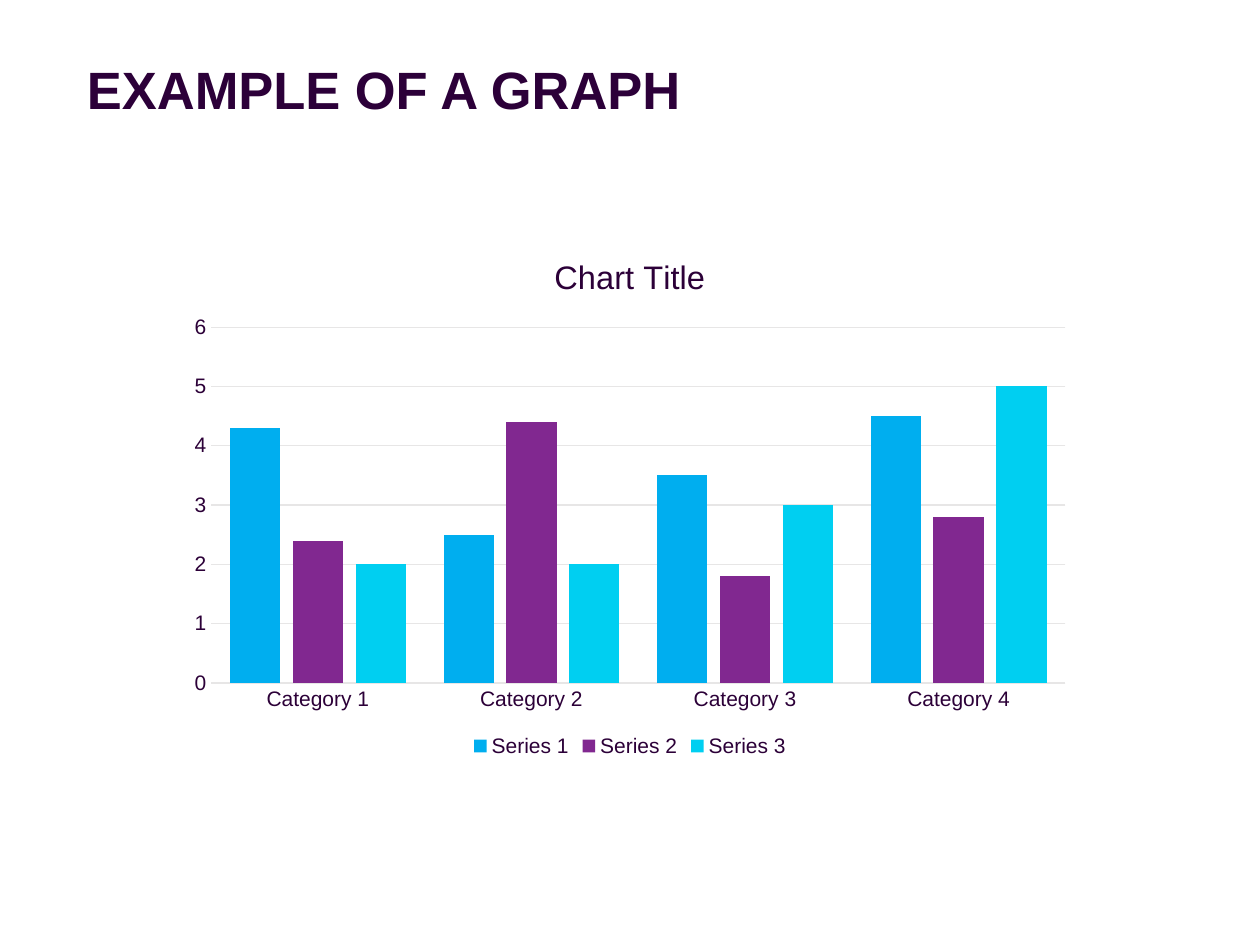
from dataclasses import dataclass
from typing import Any

from pptx import Presentation
from pptx.chart.data import CategoryChartData
from pptx.dml.color import RGBColor
from pptx.enum.chart import XL_CHART_TYPE, XL_LEGEND_POSITION, XL_TICK_MARK
from pptx.enum.text import MSO_ANCHOR, MSO_AUTO_SIZE, PP_ALIGN
from pptx.util import Pt

INK = "2C0038"
TITLE_INK = "2C0039"
GRID = "E7E6E6"


@dataclass
class Series:
    name: str
    values: tuple[float, ...]
    color: str


CATEGORIES = [f"Category {number}" for number in range(1, 5)]
SERIES = [
    Series("Series 1", (4.3, 2.5, 3.5, 4.5), "00AEEF"),
    Series("Series 2", (2.4, 4.4, 1.8, 2.8), "812890"),
    Series("Series 3", (2, 2, 3, 5), "00CFF1"),
]


def rgb(color: str) -> RGBColor:
    return RGBColor.from_string(color)


def apply(target: Any, values: dict[str, Any]) -> None:
    for name, value in values.items():
        setattr(target, name, value)


def format_font(font: Any, size: float, color: str = INK, bold: bool = False) -> None:
    apply(font, {"name": "Arial", "size": Pt(size), "bold": bold})
    font.color.rgb = rgb(color)


def format_line(line: Any) -> None:
    line.color.rgb = rgb(GRID)
    line.width = Pt(0.75)


def add_title(page: Any, text: str) -> None:
    box = page.shapes.title
    apply(box, {"left": Pt(49.68), "top": Pt(39.6),
                "width": Pt(620.64), "height": Pt(73.44)})
    frame = box.text_frame
    apply(frame, {"margin_left": 0, "margin_top": 0, "margin_right": 0,
                  "margin_bottom": 0, "word_wrap": True,
                  "auto_size": MSO_AUTO_SIZE.NONE,
                  "vertical_anchor": MSO_ANCHOR.TOP})
    para = frame.paragraphs[0]
    apply(para, {"alignment": PP_ALIGN.LEFT, "line_spacing": 0.8})
    span = para.add_run()
    span.text = text
    format_font(span.font, 30, TITLE_INK, bold=True)


def add_column_chart(page: Any) -> None:
    data = CategoryChartData()
    data.categories = CATEGORIES
    for series in SERIES:
        data.add_series(series.name, series.values)
    chart = page.shapes.add_chart(
        XL_CHART_TYPE.COLUMN_CLUSTERED,
        Pt(100.8), Pt(132.48), Pt(518.4), Pt(303.12), data).chart
    format_font(chart.font, 10)

    # Chart title
    chart.has_title = True
    para = chart.chart_title.text_frame.paragraphs[0]
    span = para.add_run()
    span.text = "Chart Title"
    format_font(span.font, 18.6)
    chart.chart_title.include_in_layout = False

    # Columns
    plot = chart.plots[0]
    apply(plot, {"gap_width": 75, "overlap": -25, "vary_by_categories": False})
    for column, series in zip(plot.series, SERIES):
        column.format.fill.solid()
        column.format.fill.fore_color.rgb = rgb(series.color)

    # Axes
    for axis in (chart.category_axis, chart.value_axis):
        apply(axis, {"major_tick_mark": XL_TICK_MARK.NONE,
                     "minor_tick_mark": XL_TICK_MARK.NONE})
        format_font(axis.tick_labels.font, 12)
    format_line(chart.category_axis.format.line)
    apply(chart.value_axis, {"minimum_scale": 0, "maximum_scale": 6,
                             "major_unit": 1, "has_major_gridlines": True})
    chart.value_axis.format.line.fill.background()
    format_line(chart.value_axis.major_gridlines.format.line)

    # Legend
    chart.has_legend = True
    apply(chart.legend, {"position": XL_LEGEND_POSITION.BOTTOM,
                         "include_in_layout": False})
    format_font(chart.legend.font, 12)


def main() -> None:
    deck = Presentation()
    apply(deck, {"slide_width": Pt(720), "slide_height": Pt(540)})
    page = deck.slides.add_slide(deck.slide_layouts[5])
    add_title(page, "EXAMPLE OF A GRAPH")
    add_column_chart(page)
    deck.save("out.pptx")


if __name__ == "__main__":
    main()
